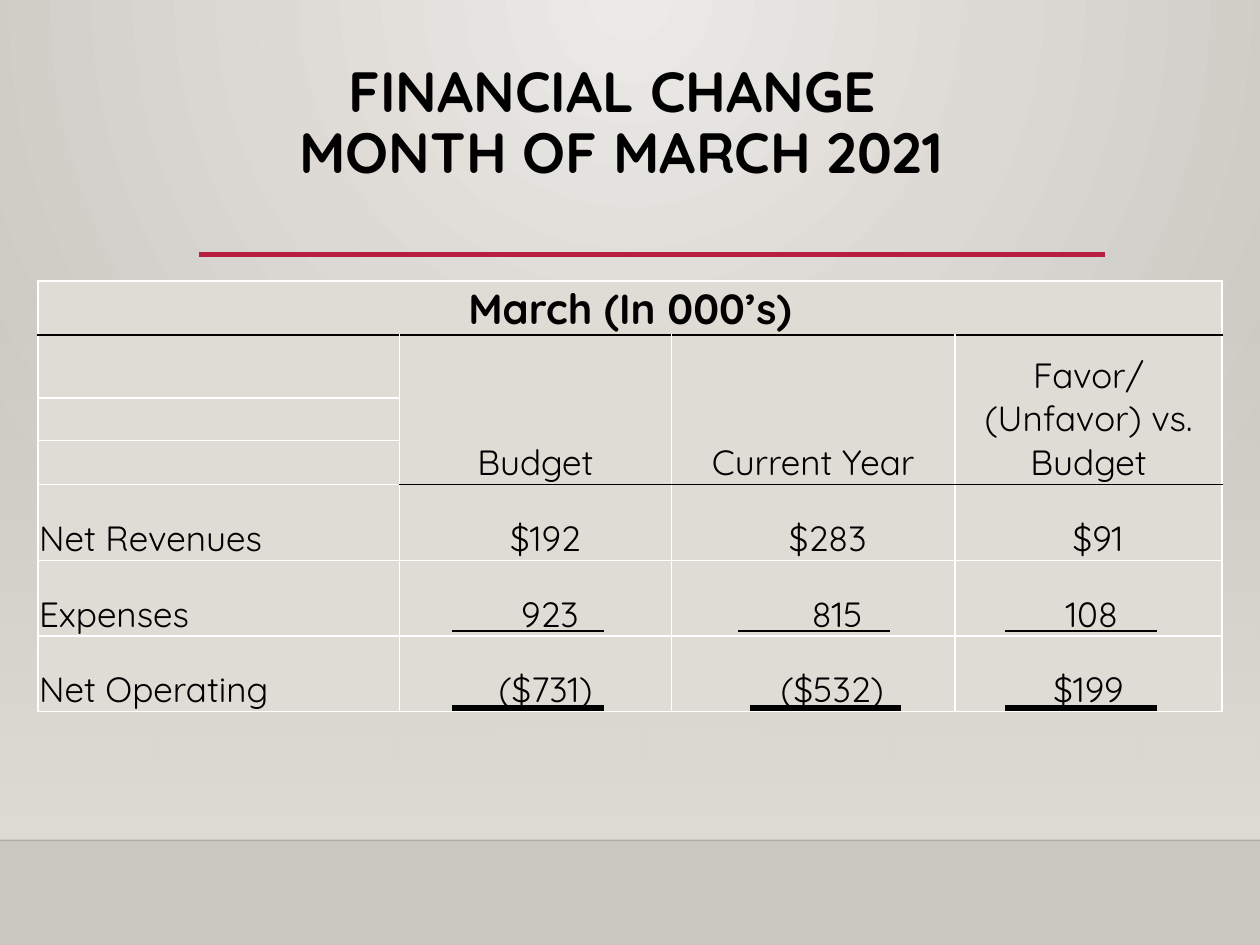
from lxml import etree
from pptx import Presentation
from pptx.dml.color import RGBColor
from pptx.enum.shapes import MSO_CONNECTOR, MSO_SHAPE
from pptx.enum.text import MSO_ANCHOR, MSO_AUTO_SIZE, PP_ALIGN
from pptx.oxml import parse_xml
from pptx.oxml.ns import nsdecls, qn
from pptx.util import Inches, Pt

FONT = "Quicksand"
COLORS = {
    "black": "000000",
    "white": "FFFFFF",
    "accent": "B71E42",
    "panel": "DFDBD5",
    "light": "ECEAE7",
    "dark": "CAC7C1",
}
COLUMN_WIDTHS = [2.87, 2.16, 2.25, 2.12]
ROW_HEIGHTS = [0.42, 0.5, 0.34, 0.35, 0.6, 0.6, 0.6]
HEADERS = ["Budget", "Current Year", "Favor/ (Unfavor) vs. Budget"]
ROWS = [
    ("Net Revenues", [("$192", 0.16), ("$283", 0.23), ("$91", 0.15)]),
    ("Expenses", [("923", 0.23), ("815", 0.38), ("108", 0.05)]),
    ("Net Operating", [("($731)", 0.16), ("($532)", 0.3), ("$199", 0)]),
]


def rgb(name):
    return RGBColor.from_string(COLORS[name])


def write_text(paragraph, text, size=20, bold=False, align=PP_ALIGN.CENTER,
               indent=0, spacing=None):
    properties = paragraph._p.get_or_add_pPr()
    properties.set("marL", str(Inches(indent)))
    properties.set("indent", "0")
    paragraph.alignment = align
    paragraph.line_spacing = spacing
    paragraph.space_before = Pt(0)
    run = paragraph.add_run()
    run.text = text
    run.font.name = FONT
    run.font.size = Pt(size)
    run.font.bold = bold
    run.font.color.rgb = rgb("black")


def add_line(slide, left, top, width, color="black", weight=1.0, alpha=None):
    line = slide.shapes.add_connector(
        MSO_CONNECTOR.STRAIGHT, Inches(left), Inches(top),
        Inches(left + width), Inches(top))
    line.line.color.rgb = rgb(color)
    line.line.width = Pt(weight)
    if alpha:
        color_element = line._element.spPr.find(".//" + qn("a:srgbClr"))
        etree.SubElement(color_element, qn("a:alpha")).set("val", str(alpha * 1000))
    etree.SubElement(line._element.spPr, qn("a:effectLst"))


def set_gradient(fill, colors):
    fill.gradient()
    for stop, color in zip(fill.gradient_stops, colors):
        stop.color.rgb = rgb(color)


def add_backdrop(slide, left, top, width, height):
    fill = slide.background.fill
    set_gradient(fill, ["light", "dark"])
    gradient = slide._element.find(".//" + qn("a:gradFill"))
    gradient.replace(gradient.find(qn("a:lin")), parse_xml(
        f'<a:path {nsdecls("a")} path="circle">'
        '<a:fillToRect l="43000" t="0" r="43000" b="100000"/></a:path>'))

    panel = slide.shapes.add_shape(
        MSO_SHAPE.RECTANGLE, Inches(left), Inches(top), Inches(width), Inches(height))
    panel.shadow.inherit = False
    panel.line.fill.background()
    set_gradient(panel.fill, ["panel", "panel"])
    panel.fill.gradient_angle = 270
    first_color = panel._element.spPr.find(".//" + qn("a:srgbClr"))
    etree.SubElement(first_color, qn("a:alpha")).set("val", "0")
    add_line(slide, left, top + height, width, alpha=20)


def add_title(slide, left, top, width, height):
    title = slide.shapes.title
    title.left, title.top = Inches(left), Inches(top)
    title.width, title.height = Inches(width), Inches(height)
    frame = title.text_frame
    frame.word_wrap = True
    frame.auto_size = MSO_AUTO_SIZE.NONE
    frame.vertical_anchor = MSO_ANCHOR.TOP
    frame.margin_top = 0
    write_text(frame.paragraphs[0], "FINANCIAL CHANGE", size=32.4, bold=True, spacing=0.9)
    write_text(frame.add_paragraph(), "MONTH OF MARCH 2021", size=32.4, bold=True,
               indent=0.14, spacing=0.9)
    add_line(slide, left + 0.82, top + 1.52, 7.19, "accent", 2.5)


def set_border(cell, side, color="black", weight=1.0):
    cell._tc.get_or_add_tcPr().append(parse_xml(
        f'<a:ln{side} {nsdecls("a")} w="{Pt(weight)}"><a:solidFill>'
        f'<a:srgbClr val="{COLORS[color]}"/></a:solidFill></a:ln{side}>'))


def style_cell(cell, row, column):
    if row == 0:
        set_border(cell, "R", "white")
    if row == 1 or (row == 4 and column):
        set_border(cell, "T")
    if row == 0 or (row in (1, 3) and column):
        set_border(cell, "B")
    cell.fill.solid()
    cell.fill.fore_color.rgb = rgb("panel")
    cell.vertical_anchor = MSO_ANCHOR.BOTTOM
    cell.margin_left = cell.margin_right = cell.margin_top = Inches(0.01)
    cell.margin_bottom = 0


def add_finance_table(slide, left, top, width, height):
    frame = slide.shapes.add_table(
        len(ROW_HEIGHTS), len(COLUMN_WIDTHS),
        Inches(left), Inches(top), Inches(width), Inches(height))
    table = frame.table
    table.first_row = table.horz_banding = False
    for column, size in zip(table.columns, COLUMN_WIDTHS):
        column.width = Inches(size)
    for row, size in zip(table.rows, ROW_HEIGHTS):
        row.height = Inches(size)
    for row in range(len(ROW_HEIGHTS)):
        for column in range(len(COLUMN_WIDTHS)):
            style_cell(table.cell(row, column), row, column)

    def fill_cell(row, column, text, **style):
        write_text(table.cell(row, column).text_frame.paragraphs[0], text, **style)

    table.cell(0, 0).merge(table.cell(0, 3))
    fill_cell(0, 0, "March (In 000’s)", size=24, bold=True)
    for column, header in enumerate(HEADERS, 1):
        table.cell(1, column).merge(table.cell(3, column))
        fill_cell(1, column, header)
    for row, (label, values) in enumerate(ROWS, 4):
        fill_cell(row, 0, label, align=PP_ALIGN.LEFT)
        for column, (value, indent) in enumerate(values, 1):
            fill_cell(row, column, value, indent=indent)

    for subtotal_left, total_left in [(3.29, 3.29), (5.56, 5.65), (7.68, 7.68)]:
        add_line(slide, left + subtotal_left, top + 2.78, 1.2, weight=1.25)
        add_line(slide, left + total_left, top + 3.39, 1.2, weight=3)


def main():
    presentation = Presentation()
    presentation.slide_width = Inches(10)
    presentation.slide_height = Inches(7.5)
    slide = presentation.slides.add_slide(presentation.slide_layouts[5])
    add_backdrop(slide, 0, 2.2, 10, 4.47)
    add_title(slide, 0.76, 0.5, 8.2, 1.13)
    add_finance_table(slide, 0.3, 2.23, 9.4, sum(ROW_HEIGHTS))
    presentation.save("out.pptx")


if __name__ == "__main__":
    main()
